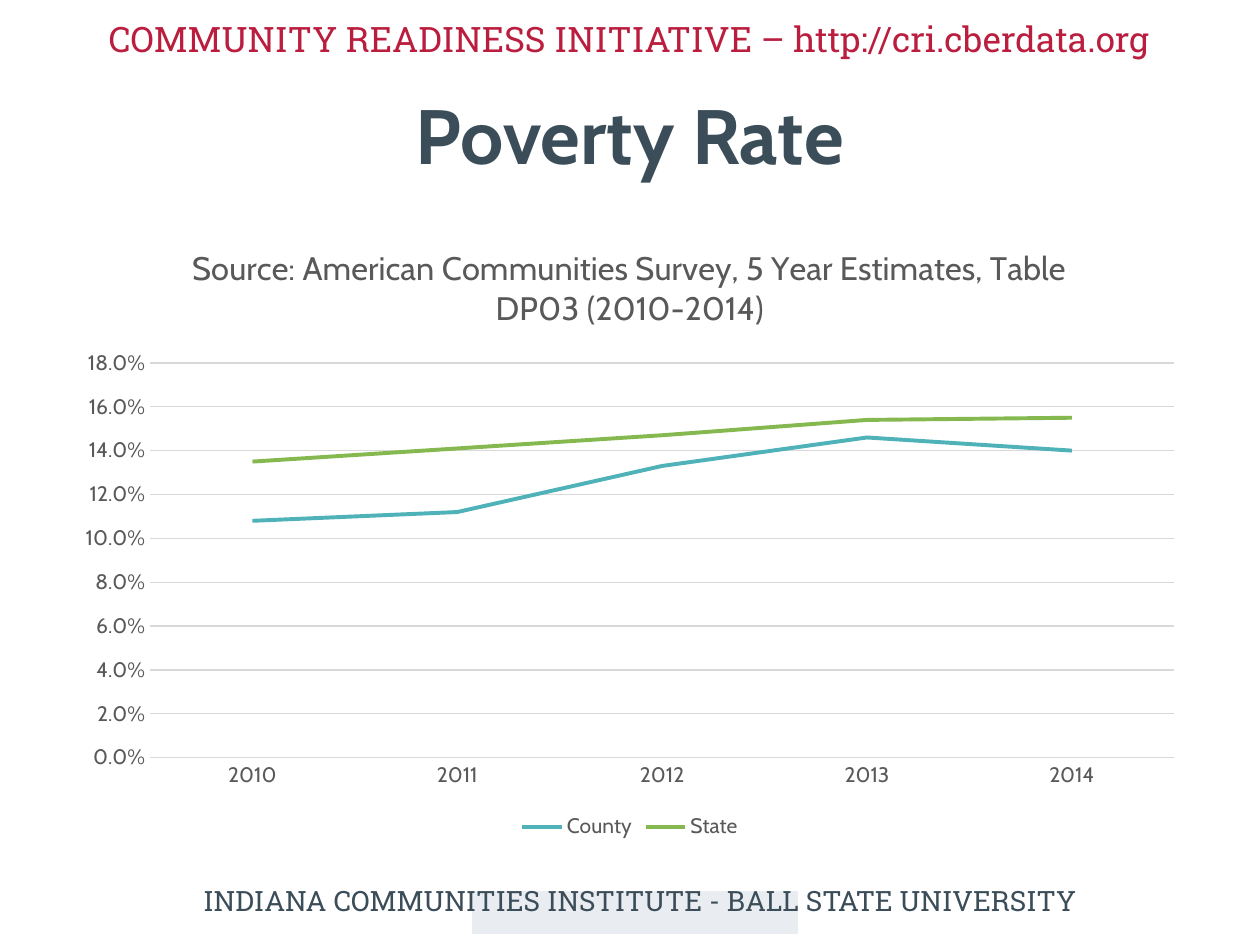
import pptx
import pptx.util
import pptx.dml.color
import pptx.chart.data
import pptx.enum.chart
import pptx.enum.shapes
import pptx.enum.text

Inches = pptx.util.Inches
Pt = pptx.util.Pt
ENUM = pptx.enum.chart

NAVY, RED, GREY, RULE = "3B4D59", "BA1D3D", "595959", "D9D9D9"
YEARS = ["2010", "2011", "2012", "2013", "2014"]
RATES = [
    ("County", "4FB2B9", [0.108, 0.112, 0.133, 0.146, 0.14]),
    ("State", "86B850", [0.135, 0.141, 0.147, 0.154, 0.155]),
]
SOURCE = "Source: American Communities Survey, 5 Year Estimates, Table DP03 (2010-2014)"


def tint(color):
    return pptx.dml.color.RGBColor.from_string(color)


def apply(target, values):
    for name, value in values.items():
        setattr(target, name, value)


def style(font, color, size, name="Cabin", bold=False):
    apply(font, {"name": name, "size": Pt(size), "bold": bold})
    font.color.rgb = tint(color)


def stroke(line, color, width):
    line.color.rgb = tint(color)
    line.width = Pt(width)


def add_panel(slide, box, color, edge=None):
    panel = slide.shapes.add_shape(
        pptx.enum.shapes.MSO_SHAPE.RECTANGLE, *map(Inches, box))
    panel.shadow.inherit = False
    panel.fill.solid()
    panel.fill.fore_color.rgb = tint(color)
    if edge:
        stroke(panel.line, edge, 0.75)
    else:
        panel.line.fill.background()


def add_label(slide, box, text, color, size, name, bold=False, anchor="TOP"):
    frame = slide.shapes.add_textbox(*map(Inches, box)).text_frame
    apply(frame, {
        "word_wrap": True,
        "vertical_anchor": getattr(pptx.enum.text.MSO_ANCHOR, anchor),
    })
    line = frame.paragraphs[0]
    line.alignment = pptx.enum.text.PP_ALIGN.CENTER
    run = line.add_run()
    run.text = text
    style(run.font, color, size, name, bold)


def add_header(slide, box):
    left, top, width, height = box
    add_panel(slide, box, "FFFFFF")
    add_label(slide, (left + 0.08, top + 0.09, width - 0.17, height - 0.14),
              "COMMUNITY READINESS INITIATIVE – http://cri.cberdata.org",
              RED, 20, "Roboto Slab")


def add_footer(slide, box):
    left, top, width, height = box
    add_panel(slide, (left + 3.17, top + 0.12, 2.58, 0.33), "E9ECF1", "E9ECF1")
    add_label(slide, box, "INDIANA COMMUNITIES INSTITUTE - BALL STATE UNIVERSITY",
              NAVY, 16, "Roboto Slab")


def add_graph(slide, box):
    data = pptx.chart.data.CategoryChartData(number_format="0.0%")
    data.categories = YEARS
    for name, color, rates in RATES:
        data.add_series(name, rates)
    chart = slide.shapes.add_chart(
        ENUM.XL_CHART_TYPE.LINE, *map(Inches, box), data).chart
    style(chart.font, "000000", 10)
    apply(chart, {"has_title": True, "has_legend": True})
    title = chart.chart_title.text_frame
    title.text = SOURCE
    style(title.paragraphs[0].runs[0].font, GREY, 18.6)
    chart.chart_title.include_in_layout = False
    apply(chart.legend, {
        "position": ENUM.XL_LEGEND_POSITION.BOTTOM,
        "include_in_layout": False,
    })
    style(chart.legend.font, GREY, 12)

    ticks = {
        "major_tick_mark": ENUM.XL_TICK_MARK.NONE,
        "minor_tick_mark": ENUM.XL_TICK_MARK.NONE,
    }
    years, rates = chart.category_axis, chart.value_axis
    for axis in (years, rates):
        apply(axis, ticks)
        style(axis.tick_labels.font, GREY, 12)
    stroke(years.format.line, RULE, 0.75)
    apply(rates, {
        "minimum_scale": 0,
        "maximum_scale": 0.18,
        "major_unit": 0.02,
        "has_major_gridlines": True,
    })
    apply(rates.tick_labels, {
        "number_format": "0.0%",
        "number_format_is_linked": False,
    })
    rates.format.line.fill.background()
    stroke(rates.major_gridlines.format.line, RULE, 0.75)

    plot = chart.plots[0]
    plot.vary_by_categories = False
    for series, (name, color, values) in zip(plot.series, RATES):
        series.smooth = False
        series.marker.style = ENUM.XL_MARKER_STYLE.NONE
        stroke(series.format.line, color, 2.25)


def main():
    deck = pptx.Presentation()
    apply(deck, {"slide_width": Inches(10), "slide_height": Inches(7.5)})
    slide = deck.slides.add_slide(deck.slide_layouts[6])
    add_footer(slide, (0.58, 6.96, 9, 0.37))
    add_header(slide, (0, 0, 10, 0.58))
    add_label(slide, (0.5, 0.58, 9, 0.97), "Poverty Rate",
              NAVY, 44, "Cabin", True, "MIDDLE")
    add_graph(slide, (0.5, 1.75, 9, 4.95))
    deck.save("out.pptx")


if __name__ == "__main__":
    main()
